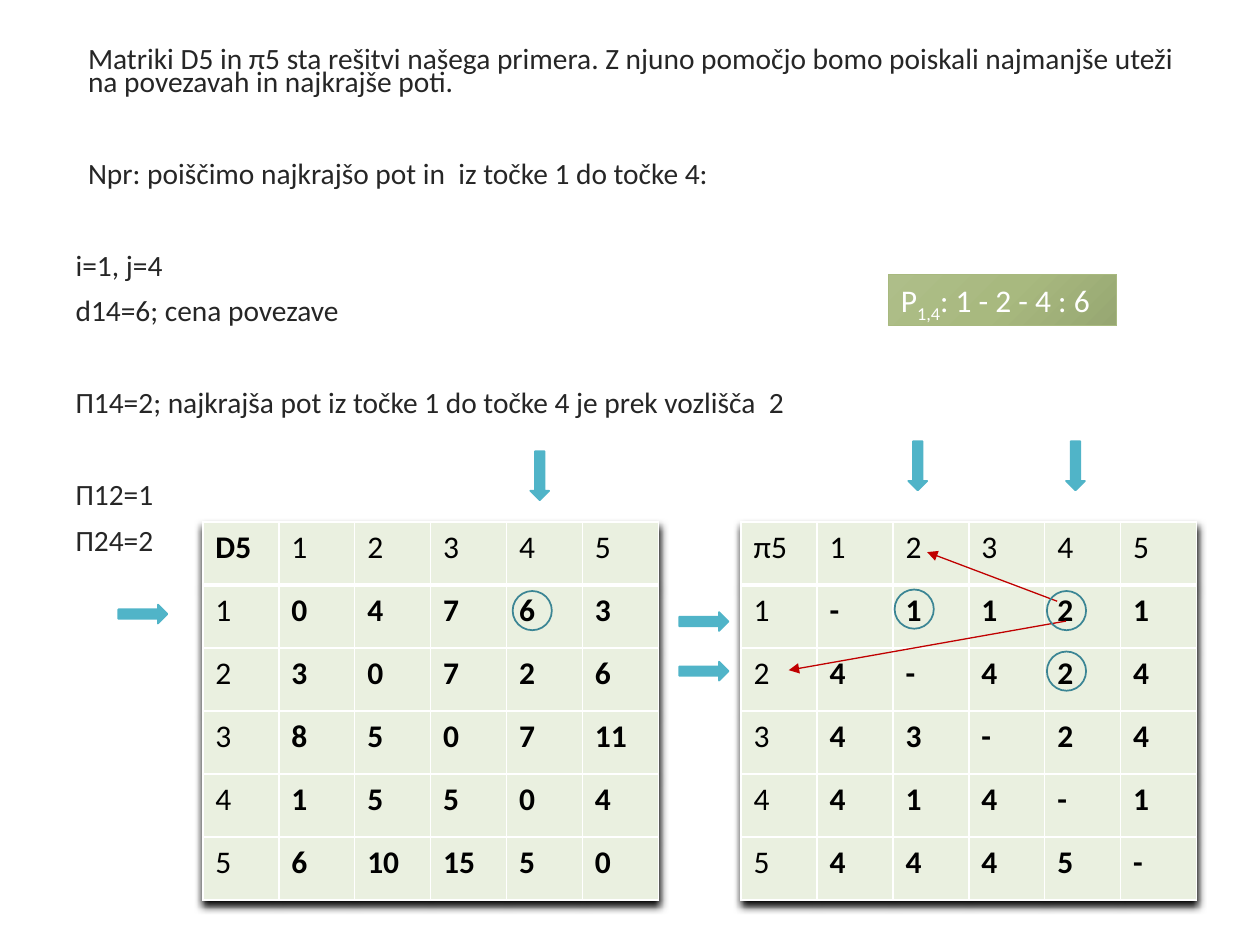
from copy import deepcopy
from dataclasses import dataclass

from lxml.etree import SubElement
from pptx import Presentation
from pptx.dml.color import RGBColor
from pptx.enum.shapes import MSO_CONNECTOR, MSO_SHAPE
from pptx.enum.text import MSO_ANCHOR, MSO_AUTO_SIZE, PP_ALIGN
from pptx.oxml import parse_xml
from pptx.oxml.ns import nsdecls, qn
from pptx.util import Cm, Pt

COLORS = {
    "text": "262626", "black": "000000", "white": "FFFFFF", "cell": "EAF0E0",
    "arrow": "50B4C8", "ring": "3B8594", "path": "C00000", "box_line": "A8B97F",
}
BOX_GRADIENT = [(0, "AEBE89"), (0.5, "A8B97F"), (1, "97A772")]
FONT = "Calibri"
COLUMN_WIDTH, ROW_HEIGHT = 1.53, 1.27
TABLE_TOP = 10.52


@dataclass
class Line:
    text: str
    indent: float = 0  # cm
    starts_group: bool = True


@dataclass
class Matrix:
    left: float
    rows: list[str]
    bold_corner: bool = False


@dataclass
class Mark:
    """A small shape placed by its centre, in cm."""
    x: float
    y: float
    rotation: int = 0


LINES = [
    Line("Matriki D5 in π5 sta rešitvi našega primera. Z njuno pomočjo bomo "
         "poiskali najmanjše uteži na povezavah in najkrajše poti.", 0.25, False),
    Line("Npr: poiščimo najkrajšo pot in  iz točke 1 do točke 4:", 0.25),
    Line("i=1, j=4"),
    Line("d14=6; cena povezave", starts_group=False),
    Line("Π14=2; najkrajša pot iz točke 1 do točke 4 je prek vozlišča  2"),
    Line("Π12=1"),
    Line("Π24=2", starts_group=False),
]
MATRICES = [
    Matrix(14.94, ["π5 1 2 3 4 5", "1 - 1 1 2 1", "2 4 - 4 2 4",
                   "3 4 3 - 2 4", "4 4 1 4 - 1", "5 4 4 4 5 -"]),
    Matrix(4.09, ["D5 1 2 3 4 5", "1 0 4 7 6 3", "2 3 0 7 2 6",
                  "3 8 5 0 7 11", "4 1 5 5 0 4", "5 6 10 15 5 0"], True),
]
ARROWS = [Mark(14.19, 12.53), Mark(14.19, 13.53), Mark(2.88, 12.38),
          Mark(21.68, 9.39, 90), Mark(18.5, 9.39, 90), Mark(10.88, 9.59, 90)]
RINGS = [Mark(21.5, 12.31), Mark(18.43, 12.28), Mark(21.5, 13.53), Mark(10.73, 12.31)]
PATHS = [(21.31, 12.12, 18.69, 11.13), (21.49, 12.52, 15.9, 13.51)]


def rgb(name: str) -> RGBColor:
    return RGBColor.from_string(COLORS[name])


def add_text(paragraph, text: str, *, size: float = 18, color: str = "black",
             bold: bool = False, baseline: int = 0) -> None:
    run = paragraph.add_run()
    run.text = text
    run.font.name = FONT
    run.font.size = Pt(size)
    run.font.bold = bold
    run.font.color.rgb = rgb(color)
    if baseline:
        run.font._element.set("baseline", str(baseline * 1000))


def fill_body(placeholder) -> None:
    placeholder.left, placeholder.top = Cm(1.27), Cm(0.91)
    placeholder.width, placeholder.height = Cm(22.86), Cm(15.77)
    frame = placeholder.text_frame
    frame.auto_size = MSO_AUTO_SIZE.NONE
    frame.vertical_anchor = MSO_ANCHOR.TOP
    for index, line in enumerate(LINES):
        paragraph = frame.add_paragraph() if index else frame.paragraphs[0]
        paragraph.line_spacing = 0.65
        paragraph.space_before = Pt(39.3 if line.starts_group else 13)
        properties = paragraph._p.get_or_add_pPr()
        properties.set("marL", str(Cm(line.indent)))
        properties.set("indent", "0")
        SubElement(properties, qn("a:buNone"))
        add_text(paragraph, line.text, size=16.8, color="text")


def set_borders(cell, top: float, bottom: float) -> None:
    properties = cell._tc.get_or_add_tcPr()
    widths = {"lnL": 1, "lnR": 1, "lnT": top, "lnB": bottom}
    for position, (tag, width) in enumerate(widths.items()):
        properties.insert(position, parse_xml(
            f'<a:{tag} {nsdecls("a")} w="{Pt(width)}"><a:solidFill>'
            f'<a:srgbClr val="{COLORS["white"]}"/></a:solidFill></a:{tag}>'))


def add_matrix(slide, matrix: Matrix) -> None:
    count = len(matrix.rows)
    table = slide.shapes.add_table(
        count, count, Cm(matrix.left), Cm(TABLE_TOP),
        Cm(COLUMN_WIDTH * count), Cm(ROW_HEIGHT * count)).table
    table.horz_banding = False
    table._tbl.tblPr.insert(0, parse_xml(
        f'<a:effectLst {nsdecls("a")}><a:outerShdw blurRad="57150" dist="38100" '
        f'dir="5400000" algn="ctr" rotWithShape="0"><a:srgbClr val="{COLORS["black"]}"/>'
        '</a:outerShdw></a:effectLst>'))
    for row, values in enumerate(matrix.rows):
        for column, value in enumerate(values.split()):
            cell = table.cell(row, column)
            cell.fill.solid()
            cell.fill.fore_color.rgb = rgb("cell")
            set_borders(cell, top=3 if row == 1 else 1, bottom=3 if row == 0 else 1)
            is_corner = row == column == 0
            bold = matrix.bold_corner if is_corner else row > 0 and column > 0
            add_text(cell.text_frame.paragraphs[0], value, bold=bold)


def add_path(slide, points: tuple[float, float, float, float]) -> None:
    connector = slide.shapes.add_connector(MSO_CONNECTOR.STRAIGHT, *map(Cm, points))
    connector.line.color.rgb = rgb("path")
    connector.line.width = Pt(0.75)
    SubElement(connector.line._get_or_add_ln(), qn("a:tailEnd"), type="triangle")
    SubElement(connector._element.spPr, qn("a:effectLst"))


def add_mark(slide, kind, mark: Mark, width: float, height: float,
             line: str, fill: str | None = None) -> None:
    shape = slide.shapes.add_shape(kind, Cm(mark.x - width / 2), Cm(mark.y - height / 2),
                                   Cm(width), Cm(height))
    shape.rotation = mark.rotation
    shape.shadow.inherit = False
    shape.line.color.rgb = rgb(line)
    shape.line.width = Pt(1)
    if fill:
        shape.fill.solid()
        shape.fill.fore_color.rgb = rgb(fill)
    else:
        shape.fill.background()


def add_result_box(slide) -> None:
    shape = slide.shapes.add_shape(MSO_SHAPE.RECTANGLE, Cm(17.91), Cm(5.54), Cm(4.6), Cm(1.02))
    shape.shadow.inherit = False
    shape.line.color.rgb = rgb("box_line")
    shape.line.width = Pt(0.75)
    shape.fill.gradient()
    shape.fill.gradient_angle = 315
    # The default gradient has two stops; add one for the middle
    stop_list = shape._element.spPr.find(".//" + qn("a:gsLst"))
    stop_list.insert(1, deepcopy(stop_list[0]))
    for stop, (position, color) in zip(shape.fill.gradient_stops, BOX_GRADIENT):
        stop.position = position
        stop.color.rgb = RGBColor.from_string(color)
    frame = shape.text_frame
    frame.word_wrap = True
    frame.vertical_anchor = MSO_ANCHOR.TOP
    paragraph = frame.paragraphs[0]
    paragraph.alignment = PP_ALIGN.LEFT
    add_text(paragraph, "P", color="white")
    add_text(paragraph, "1,4", color="white", baseline=-25)
    add_text(paragraph, ": 1 - 2 - 4 : 6", color="white")


def main() -> None:
    presentation = Presentation()
    presentation.slide_width, presentation.slide_height = Cm(25.4), Cm(19.05)
    slide = presentation.slides.add_slide(presentation.slide_layouts[1])
    # The slide has body text but no title
    title = slide.shapes.title._element
    title.getparent().remove(title)
    fill_body(slide.placeholders[1])
    for matrix in MATRICES:
        add_matrix(slide, matrix)
    for points in PATHS:
        add_path(slide, points)
    for mark in ARROWS:
        add_mark(slide, MSO_SHAPE.RIGHT_ARROW, mark, 0.99, 0.38, "arrow", "arrow")
    for mark in RINGS:
        add_mark(slide, MSO_SHAPE.OVAL, mark, 0.79, 0.79, "ring")
    add_result_box(slide)
    presentation.save("out.pptx")


if __name__ == "__main__":
    main()
